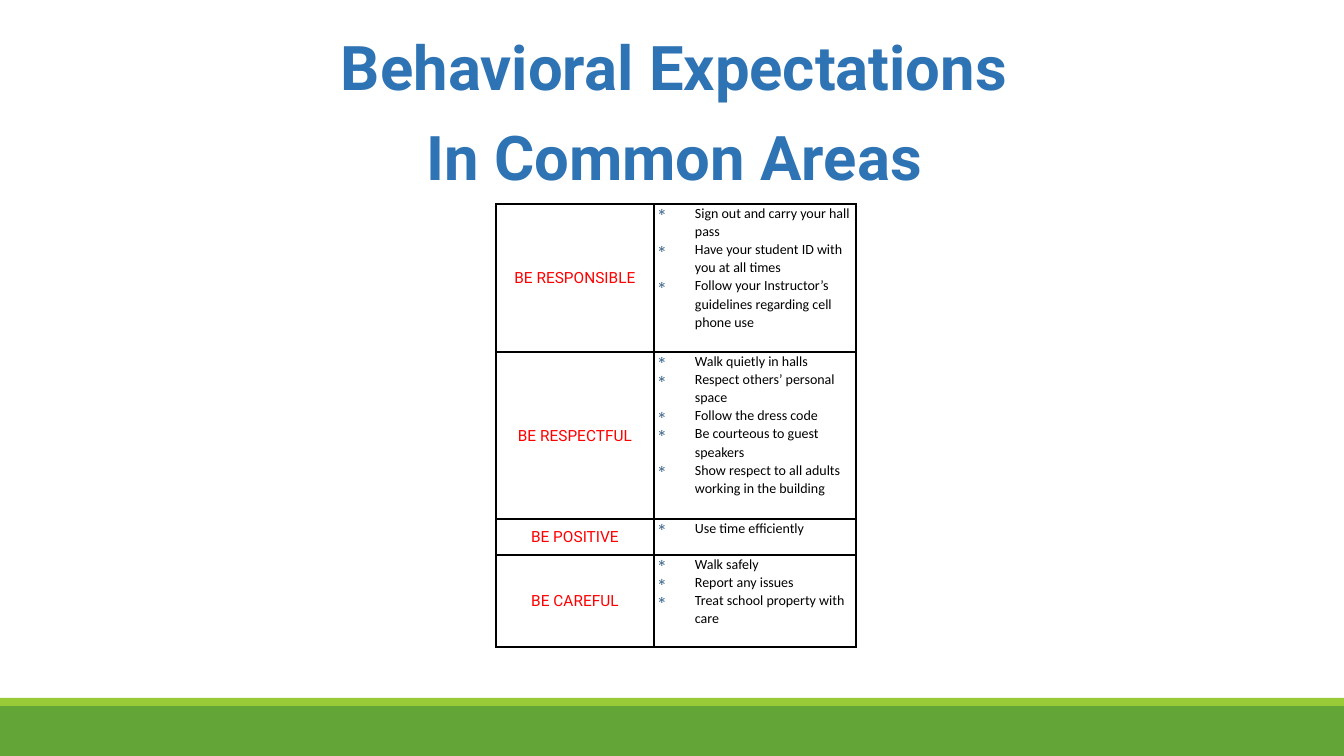
from dataclasses import dataclass
from typing import NamedTuple

from lxml.etree import SubElement
from pptx import Presentation
from pptx.dml.color import RGBColor
from pptx.enum.shapes import MSO_SHAPE as Shape
from pptx.enum.text import MSO_ANCHOR as Anchor, PP_ALIGN as Align
from pptx.oxml import parse_xml
from pptx.oxml.ns import nsdecls, qn
from pptx.util import Emu, Pt

EMU_PER_PX = 914400 / 100.8


def px(length: int) -> Emu:
    return Emu(round(length * EMU_PER_PX))


class TextStyle(NamedTuple):
    font: str
    size: int
    color: str
    bold: bool = False


@dataclass(frozen=True)
class Theme:
    title: TextStyle = TextStyle("Roboto", 44, "2E74B5", True)
    value: TextStyle = TextStyle("Roboto", 11, "FF0000")
    rule: TextStyle = TextStyle("Calibri", 10, "000000")
    bullet: str = "1F4E79"
    border: str = "000000"
    ground: str = "63A537"
    stripe: str = "99CB38"
    line_spacing: float = 1.07


class Box(NamedTuple):
    left: int
    top: int
    width: int
    height: int

    def emu(self) -> tuple[Emu, ...]:
        return tuple(px(length) for length in self)


class Band(NamedTuple):
    box: Box
    color: str


class Expectation(NamedTuple):
    value: str
    height: int
    rules: tuple[str, ...]


THEME = Theme()
SLIDE_WIDTH, SLIDE_HEIGHT = 1344, 756
BANDS = (
    Band(Box(0, 706, SLIDE_WIDTH, 50), THEME.ground),
    Band(Box(0, 698, SLIDE_WIDTH, 8), THEME.stripe),
)
TITLE_BOX = Box(155, 19, 1039, 181)
TITLE_LINES = ("Behavioral Expectations", "In Common Areas")
TABLE_LEFT, TABLE_TOP = 496, 204
COLUMN_WIDTHS = (158, 202)
CELL_INSET = 3
BULLET_INDENT = 38
EXPECTATIONS = (
    Expectation("BE RESPONSIBLE", 148, (
        "Sign out and carry your hall pass",
        "Have your student ID with you at all times",
        "Follow your Instructor’s guidelines regarding cell phone use",
    )),
    Expectation("BE RESPECTFUL", 167, (
        "Walk quietly in halls",
        "Respect others’ personal space",
        "Follow the dress code",
        "Be courteous to guest speakers",
        "Show respect to all adults working in the building",
    )),
    Expectation("BE POSITIVE", 36, ("Use time efficiently",)),
    Expectation("BE CAREFUL", 92, (
        "Walk safely",
        "Report any issues",
        "Treat school property with care",
    )),
)


def add_band(slide, band: Band) -> None:
    bar = slide.shapes.add_shape(Shape.RECTANGLE, *band.box.emu())
    bar.shadow.inherit = False
    bar.fill.solid()
    bar.fill.fore_color.rgb = RGBColor.from_string(band.color)
    bar.line.fill.background()


def write_lines(frame, lines: tuple[str, ...], style: TextStyle,
                align: Align, space_after: int = 0) -> None:
    for index, line in enumerate(lines):
        paragraph = frame.add_paragraph() if index else frame.paragraphs[0]
        paragraph.alignment = align
        paragraph.line_spacing = THEME.line_spacing
        paragraph.space_after = Pt(space_after)
        run = paragraph.add_run()
        run.text = line
        run.font.name = style.font
        run.font.size = Pt(style.size)
        run.font.bold = style.bold
        run.font.color.rgb = RGBColor.from_string(style.color)


def add_bullets(frame) -> None:
    for paragraph in frame.paragraphs:
        properties = paragraph._p.get_or_add_pPr()
        properties.set("marL", str(px(BULLET_INDENT)))
        properties.set("indent", str(-px(BULLET_INDENT)))
        color = SubElement(properties, qn("a:buClr"))
        SubElement(color, qn("a:srgbClr"), val=THEME.bullet)
        SubElement(properties, qn("a:buChar"), char="∗")


def style_cell(cell) -> None:
    cell.margin_left = cell.margin_right = px(CELL_INSET)
    cell.margin_top = cell.margin_bottom = 0
    cell.fill.background()
    properties = cell._tc.get_or_add_tcPr()
    for position, side in enumerate(("lnL", "lnR", "lnT", "lnB")):
        properties.insert(position, parse_xml(
            f'<a:{side} {nsdecls("a")} w="{Pt(1)}"><a:solidFill>'
            f'<a:srgbClr val="{THEME.border}"/></a:solidFill></a:{side}>'))


def add_title(slide) -> None:
    frame = slide.shapes.add_textbox(*TITLE_BOX.emu()).text_frame
    frame.word_wrap = True
    write_lines(frame, TITLE_LINES, THEME.title, Align.CENTER, space_after=8)


def add_expectations(slide) -> None:
    box = Box(TABLE_LEFT, TABLE_TOP, sum(COLUMN_WIDTHS),
              sum(expectation.height for expectation in EXPECTATIONS))
    table = slide.shapes.add_table(
        len(EXPECTATIONS), len(COLUMN_WIDTHS), *box.emu()).table
    table.first_row = table.horz_banding = False
    for column, width in zip(table.columns, COLUMN_WIDTHS):
        column.width = px(width)
    for row, expectation in zip(table.rows, EXPECTATIONS):
        row.height = px(expectation.height)
        value, rules = row.cells
        style_cell(value)
        style_cell(rules)
        value.vertical_anchor = Anchor.MIDDLE
        write_lines(value.text_frame, (expectation.value,), THEME.value, Align.CENTER)
        write_lines(rules.text_frame, expectation.rules, THEME.rule, Align.LEFT)
        add_bullets(rules.text_frame)


def main() -> None:
    deck = Presentation()
    deck.slide_width, deck.slide_height = px(SLIDE_WIDTH), px(SLIDE_HEIGHT)
    slide = deck.slides.add_slide(deck.slide_layouts[6])
    for band in BANDS:
        add_band(slide, band)
    add_title(slide)
    add_expectations(slide)
    deck.save("out.pptx")


if __name__ == "__main__":
    main()
